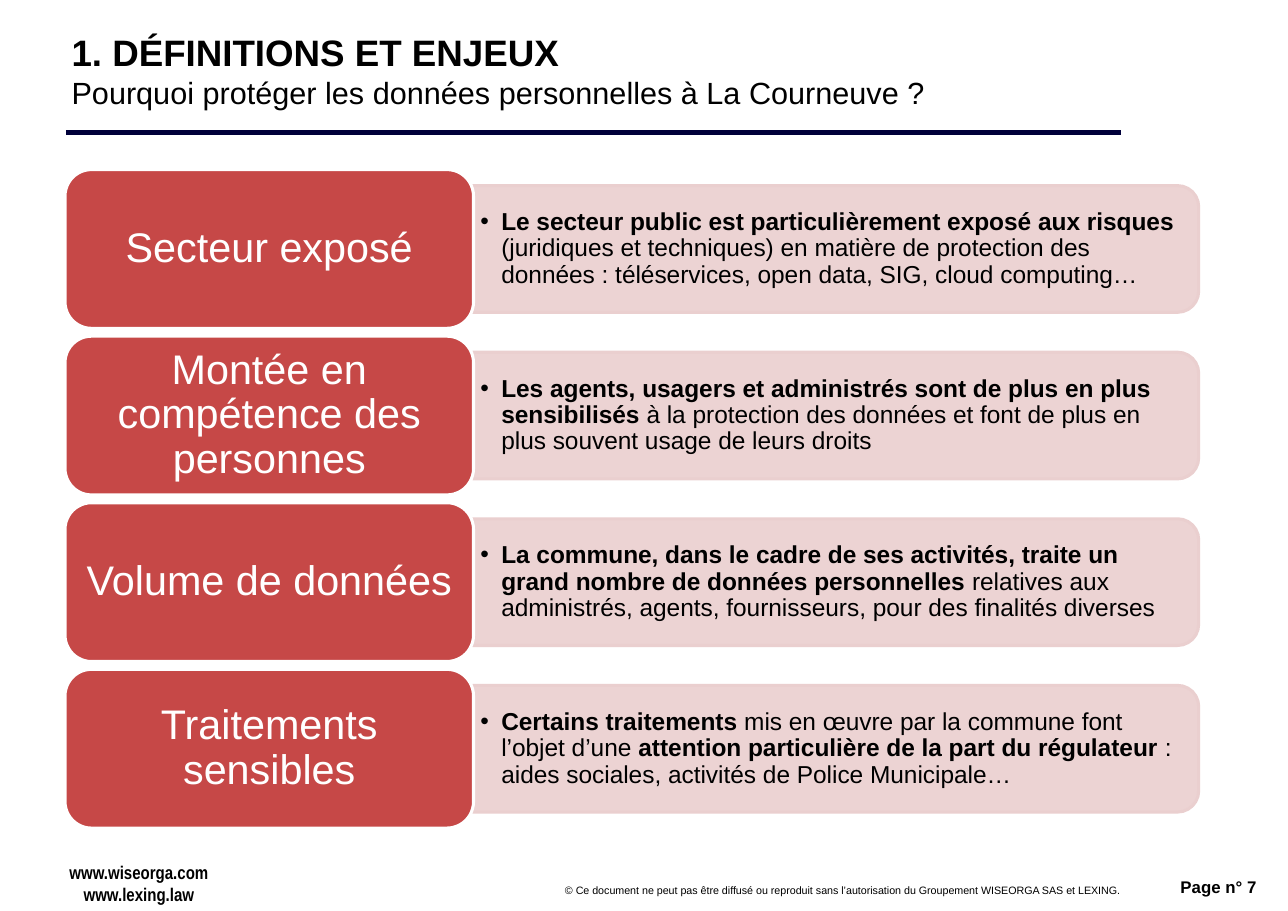
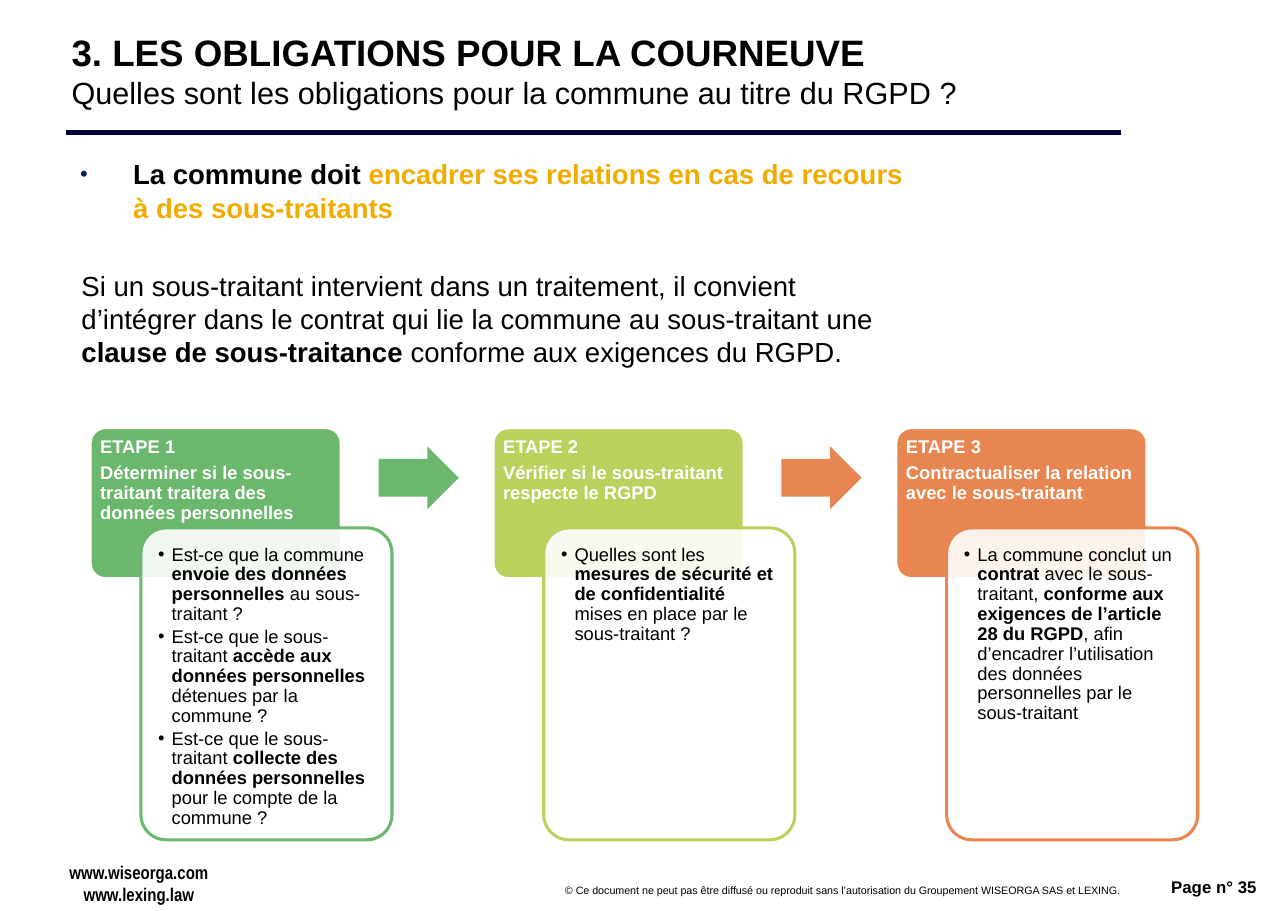
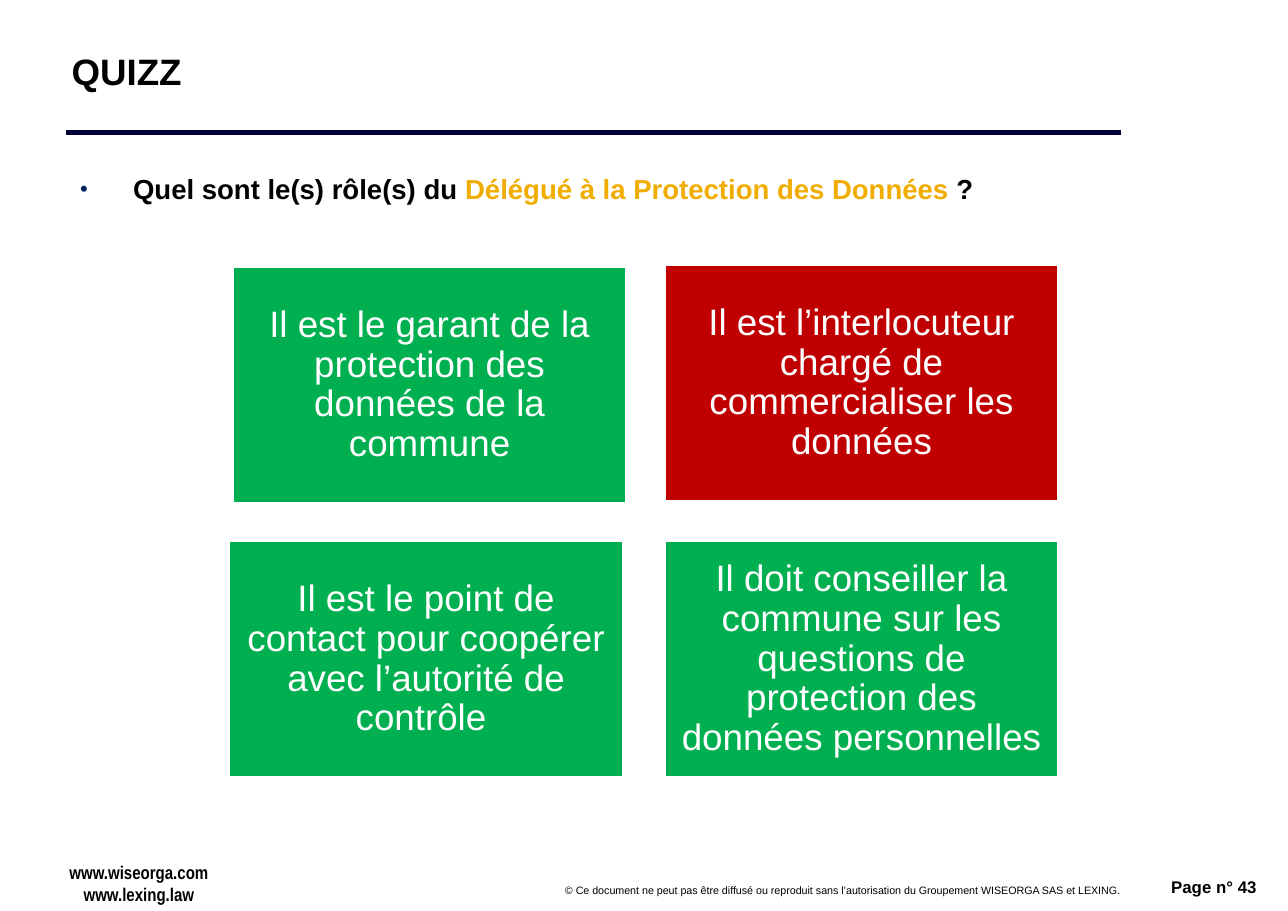
from lxml import etree
from pptx import Presentation
from pptx.dml.color import RGBColor
from pptx.enum.shapes import MSO_CONNECTOR, MSO_SHAPE
from pptx.enum.text import MSO_ANCHOR, MSO_AUTO_SIZE, PP_ALIGN
from pptx.oxml.ns import qn
from pptx.util import Cm, Pt

BLACK = RGBColor(0x00, 0x00, 0x00)
WHITE = RGBColor(0xFF, 0xFF, 0xFF)
NAVY = RGBColor(0x00, 0x00, 0x3A)
BULLET_BLUE = RGBColor(0x00, 0x20, 0x60)
GOLD = RGBColor(0xF0, 0xAD, 0x00)
BRICK = RGBColor(0xC6, 0x48, 0x47)
PINK = RGBColor(0xEA, 0xCF, 0xCF)
GREEN = RGBColor(0x6B, 0xB7, 0x6D)
LIME = RGBColor(0xBB, 0xD1, 0x5D)
ORANGE = RGBColor(0xE8, 0x86, 0x51)
RIGHT_GREEN = RGBColor(0x00, 0xB0, 0x50)
WRONG_RED = RGBColor(0xC0, 0x00, 0x00)

RECTANGLE = MSO_SHAPE.RECTANGLE
ROUNDED = MSO_SHAPE.ROUNDED_RECTANGLE
ROUND_TOP = MSO_SHAPE.ROUND_2_SAME_RECTANGLE
ARROW = MSO_SHAPE.RIGHT_ARROW
STRAIGHT = MSO_CONNECTOR.STRAIGHT
TOP, MIDDLE = MSO_ANCHOR.TOP, MSO_ANCHOR.MIDDLE
LEFT, CENTER, RIGHT = PP_ALIGN.LEFT, PP_ALIGN.CENTER, PP_ALIGN.RIGHT
NO_AUTOFIT = MSO_AUTO_SIZE.NONE

BOLD = {"bold": True}
ACCENT = {"bold": True, "color": GOLD}

SECTORS = [
    ("Secteur exposé",
     [("Le secteur public est particulièrement exposé aux risques ", BOLD),
      "(juridiques et techniques) en matière de protection des données : "
      "téléservices, open data, SIG, cloud computing…"]),
    ("Montée en compétence des personnes",
     [("Les agents, usagers et administrés sont de plus en plus sensibilisés ", BOLD),
      "à la protection des données et font de plus en plus souvent usage de leurs droits"]),
    ("Volume de données",
     [("La commune, dans le cadre de ses activités, traite un grand nombre "
       "de données personnelles ", BOLD),
      "relatives aux administrés, agents, fournisseurs, pour des finalités diverses"]),
    ("Traitements sensibles",
     [("Certains traitements ", BOLD),
      "mis en œuvre par la commune font l’objet d’une ",
      ("attention particulière de la part du régulateur", BOLD),
      " : aides sociales, activités de Police Municipale…"]),
]

STEPS = [
    (GREEN, GREEN, "Déterminer si le sous-traitant traitera des données personnelles", [
        ["Est-ce que la commune ", ("envoie des données personnelles ", BOLD),
         "au sous-traitant ?"],
        ["Est-ce que le sous-traitant ", ("accède aux données personnelles ", BOLD),
         "détenues par la commune ?"],
        ["Est-ce que le sous-traitant ", ("collecte des données personnelles ", BOLD),
         "pour le compte de la commune ?"]]),
    (LIME, ORANGE, "Vérifier si le sous-traitant respecte le RGPD", [
        ["Quelles sont les ", ("mesures de sécurité et de confidentialité ", BOLD),
         "mises en place par le sous-traitant ?"]]),
    (ORANGE, None, "Contractualiser la relation avec le sous-traitant", [
        ["La commune conclut un ", ("contrat", BOLD), " avec le sous-traitant, ",
         ("conforme aux exigences de l’article 28 du RGPD", BOLD),
         ", afin d’encadrer l’utilisation des données personnelles par le sous-traitant"]]),
]

ANSWERS = [
    (5.36, 6.15, RIGHT_GREEN, "Il est le garant de la protection des données de la commune"),
    (15.32, 6.1, WRONG_RED, "Il est l’interlocuteur chargé de commercialiser les données"),
    (5.28, 12.47, RIGHT_GREEN,
     "Il est le point de contact pour coopérer avec l’autorité de contrôle "),
    (15.32, 12.47, RIGHT_GREEN,
     "Il doit conseiller la commune sur les questions de protection des données personnelles"),
]


def write_paragraph(frame, runs, size=12, color=BLACK, bold=False, font="Arial",
                    align=LEFT, spacing=1.0, before=0, after=0, margin=0, indent=0,
                    bullet=False, bullet_color=None, bullet_percent=100):
    """Append one formatted paragraph made of strings and (text, format) runs."""
    paragraph = frame.paragraphs[0]
    if paragraph.runs:
        paragraph = frame.add_paragraph()
    paragraph.alignment = align
    paragraph.line_spacing = spacing
    paragraph.space_before, paragraph.space_after = Pt(before), Pt(after)
    properties = paragraph._p.get_or_add_pPr()
    properties.set("marL", str(Cm(margin)))
    properties.set("indent", str(Cm(indent)))
    if bullet:
        if bullet_color is not None:
            holder = etree.SubElement(properties, qn("a:buClr"))
            etree.SubElement(holder, qn("a:srgbClr"), val=str(bullet_color))
        etree.SubElement(properties, qn("a:buSzPct"), val=str(bullet_percent * 1000))
        etree.SubElement(properties, qn("a:buFont"), typeface="Arial")
        etree.SubElement(properties, qn("a:buChar"), char="•")
    for item in [runs] if isinstance(runs, str) else runs:
        text, style = (item, {}) if isinstance(item, str) else item
        run = paragraph.add_run()
        run.text = text
        run.font.name, run.font.size = font, Pt(size)
        run.font.bold = style.get("bold", bold)
        run.font.color.rgb = style.get("color", color)


def set_frame(shape, inset_x=0.25, inset_y=0.13, anchor=TOP, wrap=True):
    """Set the insets, anchor and wrapping of a shape and return its text frame."""
    frame = shape.text_frame
    frame.auto_size, frame.word_wrap = NO_AUTOFIT, wrap
    frame.vertical_anchor = anchor
    frame.margin_left = frame.margin_right = Cm(inset_x)
    frame.margin_top = frame.margin_bottom = Cm(inset_y)
    return frame


def add_text_frame(slide, left, top, width, height, **layout):
    """Add a text box and return its text frame."""
    box = slide.shapes.add_textbox(Cm(left), Cm(top), Cm(width), Cm(height))
    return set_frame(box, **layout)


def add_box(slide, kind, left, top, width, height, fill, line=None, opacity=100):
    """Add a flat preset shape."""
    shape = slide.shapes.add_shape(kind, Cm(left), Cm(top), Cm(width), Cm(height))
    shape.shadow.inherit = False
    shape.fill.solid()
    shape.fill.fore_color.rgb = fill
    if opacity < 100:
        color = shape.element.spPr.find(qn("a:solidFill"))[0]
        etree.SubElement(color, qn("a:alpha"), val=str(opacity * 1000))
    if line is None:
        shape.line.fill.background()
    else:
        shape.line.color.rgb = line
        shape.line.width = Pt(2)
    return shape


def add_page(presentation, number, heading, subtitle=None):
    """Add a slide with the shared title, rule and footer."""
    slide = presentation.slides.add_slide(presentation.slide_layouts[5])
    title = slide.shapes.title
    title.left, title.top, title.width, title.height = Cm(1.5), Cm(0.43), Cm(24.36), Cm(2.39)
    frame = set_frame(title, 0.15, 0.15, MIDDLE)
    write_paragraph(frame, heading, size=24, bold=True)
    if subtitle:
        write_paragraph(frame, subtitle, size=20)

    rule = slide.shapes.add_connector(STRAIGHT, Cm(1.52), Cm(3.05), Cm(25.86), Cm(3.05))
    rule.line.color.rgb = NAVY
    rule.line.width = Pt(3)
    etree.SubElement(rule.element.spPr, qn("a:effectLst"))

    sites = add_text_frame(slide, 1.17, 19.71, 3.94, 1.32, inset_x=0.28, inset_y=0.15, wrap=False)
    for site in ("www.wiseorga.com", "www.lexing.law"):
        write_paragraph(sites, site, font="Arial Narrow", bold=True, align=CENTER, margin=0.13)
    rights = add_text_frame(slide, 9.7, 20.22, 16.41, 0.58, inset_x=0.28, inset_y=0.15)
    write_paragraph(rights, "© Ce document ne peut pas être diffusé ou reproduit sans "
                    "l’autorisation du Groupement WISEORGA SAS et LEXING.", size=7, align=RIGHT)
    page = add_text_frame(slide, 26.16, 20.07, 3.07, 0.86)
    write_paragraph(page, f"Page n° {number}", size=11, bold=True, align=RIGHT)
    return slide


def write_key_point(frame, runs):
    """Write a bold bulleted statement."""
    write_paragraph(frame, runs, size=18, bold=True, margin=1.32, indent=-1.22,
                    bullet=True, bullet_color=BULLET_BLUE, bullet_percent=80)


def add_sector(slide, left, top, label, runs):
    """Add a label block followed by its explanatory panel."""
    label_width, label_height = 9.42, 3.66
    panel_width, panel_height = 16.74, 2.92
    panel_left = left + label_width - 0.02
    panel = add_box(slide, ROUND_TOP,
                    panel_left + (panel_width - panel_height) / 2,
                    top + (label_height - panel_width) / 2,
                    panel_height, panel_width, PINK, PINK, 90)
    panel.rotation = 90
    frame = add_text_frame(slide, panel_left, top + 0.51, 16.61, 2.64,
                           inset_x=0.18, inset_y=0.09, anchor=MIDDLE)
    write_paragraph(frame, runs, size=16, spacing=0.9, margin=0.48, indent=-0.48, bullet=True)
    block = add_box(slide, ROUNDED, left, top, label_width, label_height, BRICK, WHITE)
    write_paragraph(set_frame(block, 0.27, 0.15, MIDDLE), label,
                    size=27, color=WHITE, align=CENTER, spacing=0.9)


def add_step(slide, left, top, number, color, arrow_color, heading, points):
    """Add a step card, its detail card and the arrow to the next step."""
    card = add_box(slide, ROUNDED, left, top, 5.79, 3.48, color, WHITE)
    card.adjustments[0] = 0.1
    frame = set_frame(card, 0.13, 0.13)
    for text in (f"ETAPE {number}", heading):
        write_paragraph(frame, text, color=WHITE, bold=True, spacing=0.9, after=4.2)
    detail = add_box(slide, ROUNDED, left + 1.17, top + 2.31, 5.79, 7.19, WHITE, color, 90)
    detail.adjustments[0] = 0.1
    frame = set_frame(detail, 0.23, 0.23)
    for runs in points:
        write_paragraph(frame, runs, spacing=0.9, after=1.8,
                        margin=0.31, indent=-0.31, bullet=True)
    if arrow_color is not None:
        arrow = add_box(slide, ARROW, left + 6.65, top + 0.43, 1.85, 1.45, arrow_color)
        arrow.adjustments[0] = 0.6


def add_answer(slide, left, top, color, text):
    """Add one coloured quiz answer."""
    tile = add_box(slide, RECTANGLE, left, top, 9.09, 5.46, color, WHITE)
    write_paragraph(set_frame(tile, 0.25, 0.25, MIDDLE), text,
                    size=24, color=WHITE, align=CENTER, spacing=0.9)


def build_stakes(presentation):
    """Build the slide on the reasons for protecting data."""
    slide = add_page(presentation, 7, "1. DÉFINITIONS ET ENJEUX",
                     "Pourquoi protéger les données personnelles à La Courneuve ?")
    for index, sector in enumerate(SECTORS):
        add_sector(slide, 1.5, 3.91 + index * 3.84, *sector)


def build_obligations(presentation):
    """Build the slide on the steps for subcontracting."""
    slide = add_page(presentation, 35, "3. LES OBLIGATIONS POUR LA COURNEUVE",
                     "Quelles sont les obligations pour la commune au titre du RGPD ?")
    frame = add_text_frame(slide, 1.5, 3.5, 19.76, 5.2)
    write_key_point(frame, [
        "La commune doit ",
        ("encadrer ses relations en cas de recours à des sous-traitants", ACCENT)])
    write_paragraph(frame, [
        "Si un sous-traitant intervient dans un traitement, il convient d’intégrer dans le "
        "contrat qui lie la commune au sous-traitant une ",
        ("clause de sous-traitance ", BOLD),
        "conforme aux exigences du RGPD."], size=18, before=29.5, margin=0.13)
    for index, step in enumerate(STEPS):
        add_step(slide, 2.08 + index * 9.29, 9.86, index + 1, *step)


def build_quiz(presentation):
    """Build the quiz slide."""
    slide = add_page(presentation, 43, "QUIZZ")
    write_key_point(add_text_frame(slide, 1.5, 3.84, 25.63, 1.88), [
        "Quel sont le(s) rôle(s) du ",
        ("Délégué à la Protection des Données ", ACCENT),
        "?"])
    for answer in ANSWERS:
        add_answer(slide, *answer)


def main():
    """Build and save the presentation."""
    presentation = Presentation()
    presentation.slide_width, presentation.slide_height = Cm(29.7), Cm(21)
    build_stakes(presentation)
    build_obligations(presentation)
    build_quiz(presentation)
    presentation.save("out.pptx")


if __name__ == "__main__":
    main()
